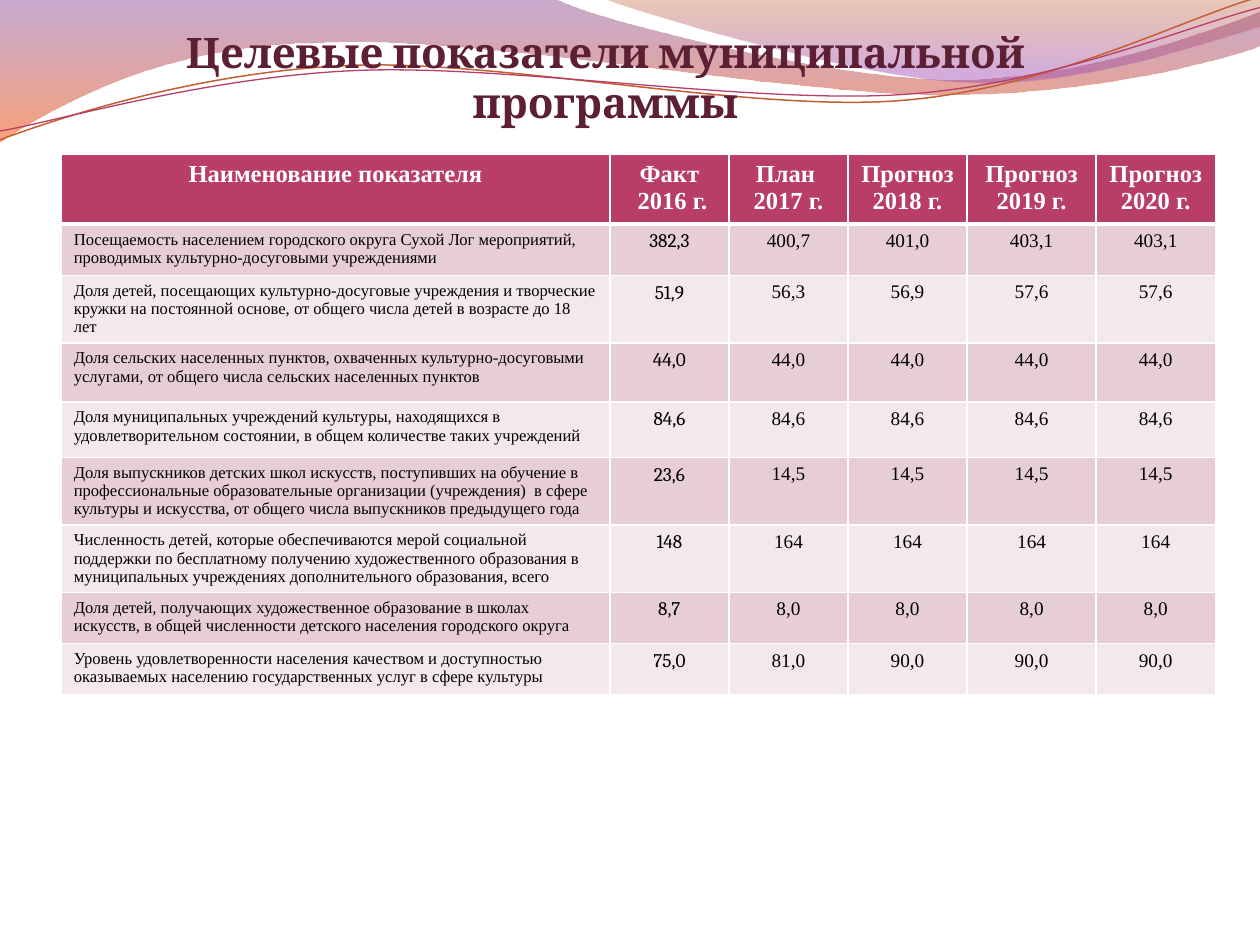
from lxml.etree import SubElement
from pptx import Presentation
from pptx.dml.color import RGBColor as RGB
from pptx.enum.text import MSO_ANCHOR as ANCHOR, MSO_AUTO_SIZE as AUTO, PP_ALIGN as ALIGN
from pptx.oxml.ns import qn
from pptx.util import Inches, Pt

COLS, ROWS = 100, 75
UNIT = Inches(10) // COLS
COLORS = {
    "title": "5C1F34", "head": "B83D68", "odd": "E6CED4", "even": "F3E8EB",
    "white": "FFFFFF", "black": "000000", "violet": "834591", "orange": "F35307",
    "rust": "B74915", "lilac": "A14BB4", "copper": "C45F30",
}
TITLE = "Целевые показатели муниципальной программы"
HEADERS = ["Наименование показателя", "Факт\n 2016 г.", "План \n2017 г.",
           "Прогноз 2018 г.", "Прогноз 2019 г.", "Прогноз 2020 г."]
INDICATORS = [
    ("Посещаемость населением городского округа Сухой Лог мероприятий, проводимых культурно-досуговыми учреждениями",
     "382,3", "400,7", "401,0", "403,1", "403,1"),
    ("Доля детей, посещающих культурно-досуговые учреждения и творческие кружки на постоянной основе, от общего числа детей в возрасте до 18 лет",
     "51,9", "56,3", "56,9", "57,6", "57,6"),
    ("Доля сельских населенных пунктов, охваченных культурно-досуговыми услугами, от общего числа сельских населенных пунктов",
     "44,0", "44,0", "44,0", "44,0", "44,0"),
    ("Доля муниципальных учреждений культуры, находящихся в удовлетворительном состоянии, в общем количестве таких учреждений",
     "84,6", "84,6", "84,6", "84,6", "84,6"),
    ("Доля выпускников детских школ искусств, поступивших на обучение в профессиональные образовательные организации (учреждения)  в сфере культуры и искусства, от общего числа выпускников предыдущего года",
     "23,6", "14,5", "14,5", "14,5", "14,5"),
    ("Численность детей, которые обеспечиваются мерой социальной поддержки по бесплатному получению художественного образования в муниципальных учреждениях дополнительного образования, всего",
     "148", "164", "164", "164", "164"),
    ("Доля детей, получающих художественное образование в школах искусств, в общей численности детского населения городского округа",
     "8,7", "8,0", "8,0", "8,0", "8,0"),
    ("Уровень удовлетворенности населения качеством и доступностью оказываемых населению государственных услуг в сфере культуры",
     "75,0", "81,0", "90,0", "90,0", "90,0"),
]
COL_WIDTHS = [43.55, 9.45, 9.45, 9.45, 10.25, 9.45]
ROW_HEIGHTS = [5.5, 4.08, 4.08, 4.7, 4.4, 4.08, 4.08, 4.08, 4.08]
BANDS = [
    ([[(0, -0.1)], [(44, -0.1)],
      [(47.6, 1.7), (66.4, 6.3), (75.8, 6.3)], [(85.3, 6.3), (95.8, 2.6), (100, 0.9)],
      [(100.1, 3.6)], [(98.3, 4.4), (87, 7.6), (74.6, 7.5)],
      [(62.2, 7.5), (38.2, 2.8), (25.7, 3.4)], [(12.9, 3.5), (4.6, 8.3), (-0.1, 11.3)]],
     [(0, "violet", 45), (1, "orange", 55)]),
    ([[(47.9, -0.1)], [(50.9, 1.1), (68.2, 6.2), (76.9, 6.5)],
      [(85.6, 6.9), (96.1, 3.2), (100, 2.1)], [(100, 0)]],
     [(0, "rust", 30), (0.8, "lilac", 45)]),
]
STRANDS = [
    ([[(0, 11.1)], [(4.8, 9.3), (15.8, 5.7), (27.7, 5.2)],
      [(39.5, 4.7), (59.3, 8.9), (71.3, 8)], [(83.3, 7.1), (93.8, 1.5), (99.8, -0.2)]],
     "copper", 0.85),
    ([[(0, 10.4)], [(4.7, 9.6), (16.4, 6.1), (28.3, 5.6)],
      [(40.3, 5.1), (59.7, 8.3), (71.7, 7.5)], [(83.6, 6.7), (94.1, 2.1), (100, 0.6)]],
     "head", 0.75),
]


def color(name):
    return RGB.from_string(COLORS[name])


def grid(*values):
    return [round(v * UNIT) for v in values]


def assign(target, values):
    for name, value in values.items():
        setattr(target, name, value)


def format_font(font, name, size, tint, bold):
    assign(font, {"name": name, "size": Pt(size), "bold": bold})
    font.color.rgb = color(tint)


def bend(sp, segments):
    outline = next(sp.element.iter(qn("a:path")))
    steps = iter(outline.findall(qn("a:lnTo")))
    for seg in segments[1:]:
        first, *rest = [next(steps) for _ in seg]
        if rest:
            curve = SubElement(outline, qn("a:cubicBezTo"))
            first.addprevious(curve)
            for step in (first, *rest):
                curve.append(step[0])
                outline.remove(step)


def add_curve(s, box, segments, closed):
    points = [grid(box[0] + x, box[1] + y) for seg in segments for x, y in seg]
    builder = s.shapes.build_freeform(*points[0])
    builder.add_line_segments(points[1:], close=closed)
    sp = builder.convert_to_shape()
    bend(sp, segments)
    sp.shadow.inherit = False
    return sp


def add_waves(s, master, box):
    waves = []
    for segments, stops in BANDS:
        sp = add_curve(s, box, segments, True)
        sp.line.fill.background()
        sp.fill.gradient()
        sp.fill.gradient_angle = 270
        for stop, (position, tint, _) in zip(sp.fill.gradient_stops, stops):
            stop.position = position
            stop.color.rgb = color(tint)
        for clr, (_, _, opacity) in zip(sp.element.spPr.iter(qn("a:srgbClr")), stops):
            SubElement(clr, qn("a:alpha"), val=str(opacity * 1000))
        waves.append(sp)
    for segments, tint, width in STRANDS:
        sp = add_curve(s, box, segments, False)
        sp.fill.background()
        sp.line.color.rgb = color(tint)
        sp.line.width = Pt(width)
        waves.append(sp)
    for sp in waves:
        master.shapes.element.append(sp.element)


def add_title(s, box):
    title = s.shapes.title
    assign(title, dict(zip(("left", "top", "width", "height"), grid(*box))))
    tf = title.text_frame
    assign(tf, {"text": TITLE, "word_wrap": True, "auto_size": AUTO.NONE,
                "vertical_anchor": ANCHOR.BOTTOM, "margin_left": 0, "margin_right": 0,
                "margin_top": Inches(0.05), "margin_bottom": 0})
    p = tf.paragraphs[0]
    p.alignment = ALIGN.CENTER
    format_font(p.runs[0].font, "Cambria", 24, "title", True)


def add_borders(cell, bottom):
    tc_pr = cell._tc.get_or_add_tcPr()
    for side, width in {"L": 1, "R": 1, "T": 1, "B": bottom}.items():
        ln = SubElement(tc_pr, qn(f"a:ln{side}"), w=str(Pt(width)))
        SubElement(SubElement(ln, qn("a:solidFill")), qn("a:srgbClr"), val=COLORS["white"])


def fill_cell(cell, text, row, col):
    add_borders(cell, 3 if row == 0 else 1)
    cell.fill.solid()
    cell.fill.fore_color.rgb = color("head" if row == 0 else "odd" if row % 2 else "even")
    cell.text = text
    if row == 0:
        style = ("Times New Roman", 14, "white", True)
    else:
        style = ("Cambria" if col == 1 else "Times New Roman", 11 if col else 9.5, "black", False)
    for p in cell.text_frame.paragraphs:
        p.alignment = ALIGN.CENTER if row == 0 or col else ALIGN.LEFT
        for r in p.runs:
            format_font(r.font, *style)


def add_indicators(s, box):
    data = [HEADERS, *INDICATORS]
    table = s.shapes.add_table(len(data), len(HEADERS), *grid(*box)).table
    for column, width in zip(table.columns, grid(*COL_WIDTHS)):
        column.width = width
    for row, height in zip(table.rows, grid(*ROW_HEIGHTS)):
        row.height = height
    for i, values in enumerate(data):
        for j, text in enumerate(values):
            fill_cell(table.cell(i, j), text, i, j)


def main():
    prs = Presentation()
    prs.slide_width, prs.slide_height = grid(COLS, ROWS)
    s = prs.slides.add_slide(prs.slide_layouts[5])
    add_waves(s, prs.slide_master, (0, 0))
    add_title(s, (5.9, 6.3, 84.3, 3.8))
    add_indicators(s, (4.86, 12.28, sum(COL_WIDTHS), sum(ROW_HEIGHTS)))
    prs.save("out.pptx")


if __name__ == "__main__":
    main()
